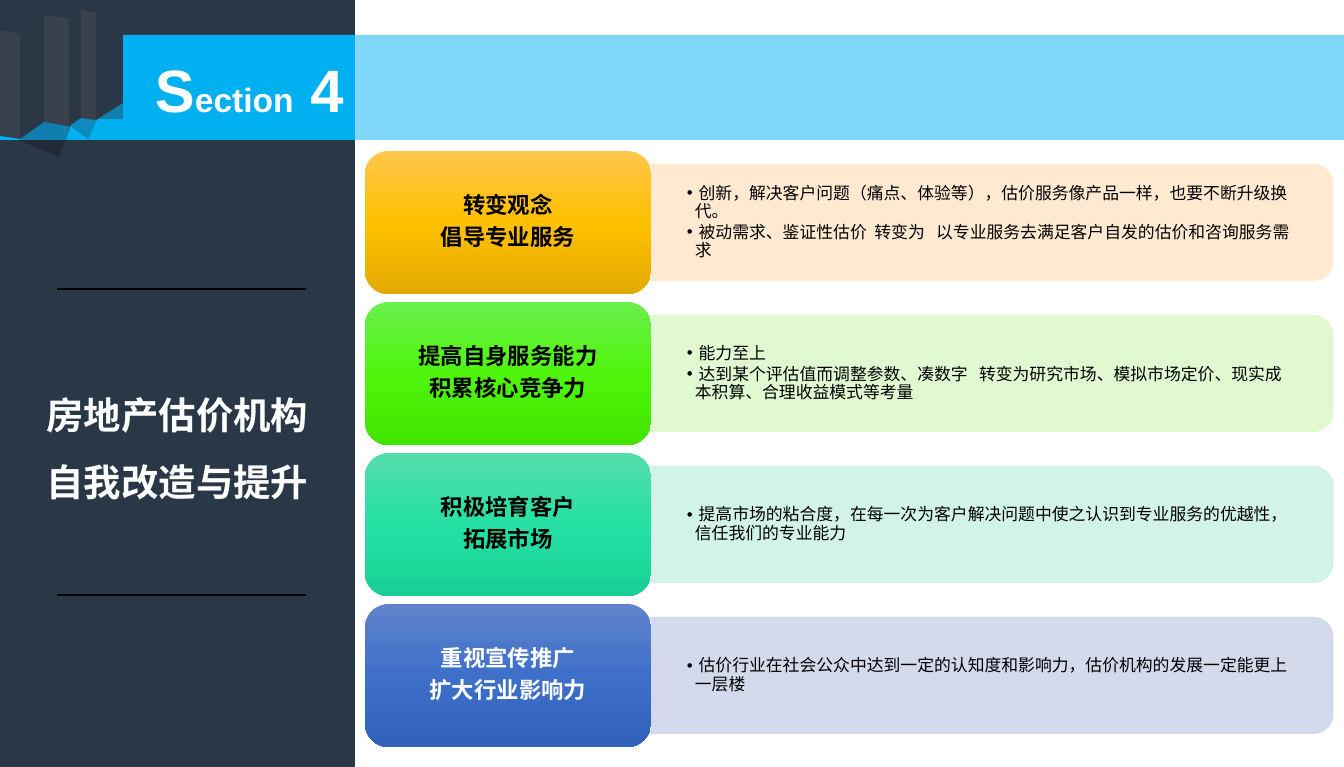
from copy import deepcopy

from lxml.etree import SubElement
from pptx import Presentation
from pptx.dml.color import RGBColor
from pptx.enum.shapes import MSO_CONNECTOR, MSO_SHAPE as SHAPE
from pptx.enum.text import MSO_ANCHOR as ANCHOR, MSO_AUTO_SIZE as FIT, PP_ALIGN as ALIGN
from pptx.oxml.ns import qn
from pptx.util import Pt

PX = 914400 / 134.4
LATIN, CHINESE = "Arial", "Noto Sans CJK SC"
COLORS = {
    "navy": "2A3747", "shade": "212A37", "strip": "38414C", "blue": "01B0F1",
    "white": "FFFFFF", "black": "000000",
}
ROWS = [
    (["转变观念", "倡导专业服务"],
     [" 创新，解决客户问题（痛点、体验等），估价服务像产品一样，也要不断升级换代。",
      " 被动需求、鉴证性估价  转变为   以专业服务去满足客户自发的估价和咨询服务需求"],
     ["FFC64B", "FFC000", "E3AB00"], "FFE8CC", "black"),
    (["提高自身服务能力", "积累核心竞争力"],
     [" 能力至上",
      " 达到某个评估值而调整参数、凑数字   转变为研究市场、模拟市场定价、现实成本积算、合理收益模式等考量"],
     ["6BEF4D", "4FF50D", "41E500"], "DDF9CC", "black"),
    (["积极培育客户", "拓展市场"],
     [" 提高市场的粘合度，在每一次为客户解决问题中使之认识到专业服务的优越性，信任我们的专业能力"],
     ["55DDAB", "25E0A4", "18D095"], "CDF2E7", "black"),
    (["重视宣传推广", "扩大行业影响力"],
     [" 估价行业在社会公众中达到一定的认知度和影响力，估价机构的发展一定能更上一层楼"],
     ["6183CB", "3E70CA", "3062BB"], "CFD6EA", "white"),
]


def px(*values):
    """Turn pixel lengths into a list of EMU."""
    return [round(value * PX) for value in values]


def rgb(color):
    """Return a colour from its name or hex string."""
    return RGBColor.from_string(COLORS.get(color, color))


def paint(shape, color, opacity=100, outline=False):
    """Give a shape a flat fill, an optional matching outline and no shadow."""
    shape.shadow.inherit = False
    shape.fill.solid()
    shape.fill.fore_color.rgb = rgb(color)
    if outline:
        shape.line.color.rgb = rgb(color)
        shape.line.width = Pt(0.5)
    else:
        shape.line.fill.background()
    if opacity < 100:
        for node in shape._element.spPr.xpath(".//a:srgbClr"):
            SubElement(node, qn("a:alpha"), val=str(opacity * 1000))


def paint_gradient(shape, stops):
    """Fill a shape with three colours from top to bottom."""
    shape.shadow.inherit = False
    shape.line.fill.background()
    shape.fill.gradient()
    shape.fill.gradient_angle = 270
    stop_list = shape._element.spPr.xpath(".//a:gsLst")[0]
    stop_list.insert(1, deepcopy(stop_list[0]))
    for stop, color, position in zip(shape.fill.gradient_stops, stops, (0, 0.5, 1)):
        stop.color.rgb = rgb(color)
        stop.position = position


def add_polygon(page, points, color, opacity=100):
    """Draw a filled polygon through the given points."""
    builder = page.shapes.build_freeform(*points[0], scale=PX)
    builder.add_line_segments(points[1:], close=True)
    paint(builder.convert_to_shape(), color, opacity)


def add_line(page, start, end, color, width):
    """Draw a straight line without a shadow."""
    line = page.shapes.add_connector(MSO_CONNECTOR.STRAIGHT, *px(*start, *end))
    line.line.color.rgb = rgb(color)
    line.line.width = Pt(width)
    SubElement(line._element.spPr, qn("a:effectLst"))


def set_frame(frame, anchor, margins=(13, 7)):
    """Set wrapping, anchor and symmetric margins of a text frame."""
    frame.word_wrap = True
    frame.auto_size = FIT.NONE
    frame.vertical_anchor = anchor
    frame.margin_left = frame.margin_right = px(margins[0])[0]
    frame.margin_top = frame.margin_bottom = px(margins[1])[0]


def add_span(para, text, size, color, font=CHINESE, bold=False):
    """Add one formatted run to a paragraph."""
    span = para.add_run()
    span.text = text
    span.font.size = Pt(size)
    span.font.bold = bold
    span.font.name = font
    span.font.color.rgb = rgb(color)
    SubElement(span._r.get_or_add_rPr(), qn("a:ea"), typeface=font)


def write_lines(frame, lines, size, color, spacing, after=0, align=ALIGN.CENTER, bold=True):
    """Write one paragraph for each line and return the paragraphs."""
    for index, text in enumerate(lines):
        para = frame.add_paragraph() if index else frame.paragraphs[0]
        para.alignment = align
        para.line_spacing = spacing
        para.space_before = Pt(0)
        para.space_after = Pt(after)
        add_span(para, text, size, color, bold=bold)
    return frame.paragraphs


def add_folds(page):
    """Draw the folded paper ornament in the top left corner."""
    add_polygon(page, [(97, 13), (123, 13), (123, 119), (97, 119)], "navy", 40)
    add_polygon(page, [(51, 112), (101, 112), (88, 139)], "navy", 30)
    add_polygon(page, [(0, 117), (74, 117), (54, 175)], "navy", 40)
    add_line(page, (70, 126), (44, 121), "navy", 0.5)
    edges = [(0, 30, 136), (20, 34, 139), (44, 15, 122), (69, 19, 126),
             (81, 10, 118), (96, 13, 120), (123, 0, 103)]
    for index, (near, far) in enumerate(zip(edges, edges[1:])):
        (left, top, foot), (right, far_top, far_foot) = near, far
        corners = [(left, top), (right, far_top), (right, far_foot), (left, foot)]
        add_polygon(page, corners, "navy" if index % 2 else "strip")
    add_polygon(page, [(19, 140), (65, 140), (59, 157)], "shade")


def add_sidebar(page, left, top, width, height):
    """Draw the dark sidebar with its banner, rules and title."""
    for box, color, opacity in [
        ((left, top, width, height), "navy", 100),
        ((left, top + 35, width, 105), "blue", 100),
        ((left + width, top + 35, 1344 - width, 105), "blue", 50),
    ]:
        paint(page.shapes.add_shape(SHAPE.RECTANGLE, *px(*box)), color, opacity)
    add_folds(page)
    for rule in (289, 595):
        add_line(page, (left + 57, top + rule), (left + 306, top + rule), "black", 0.75)
    title = page.shapes.title
    title.left, title.top, title.width, title.height = px(left, top + 363, width, 141)
    set_frame(title.text_frame, ANCHOR.TOP)
    write_lines(title.text_frame, ["房地产估价机构", "自我改造与提升"], 20, "white", 1.5)
    title._element.getparent().append(title._element)


def add_section_label(page, left, top, width, height):
    """Write the section number on the banner."""
    frame = page.shapes.add_textbox(*px(left, top, width, height)).text_frame
    set_frame(frame, ANCHOR.TOP)
    for text, size in [("S", 32), ("ection", 18), (" 4", 32)]:
        add_span(frame.paragraphs[0], text, size, "white", LATIN, True)


def add_row(page, left, top, width, height, row):
    """Draw one heading block and its panel of bullets."""
    heading, points, stops, tint, ink = row
    block_width, panel_height = 286, 116
    panel_left, panel_width = left + block_width, width - block_width
    middle, center = top + height / 2, panel_left + panel_width / 2
    panel = page.shapes.add_shape(SHAPE.ROUND_2_SAME_RECTANGLE, *px(
        center - panel_height / 2, middle - panel_width / 2, panel_height, panel_width))
    panel.rotation = 90
    paint(panel, tint, 90, outline=True)

    notes = page.shapes.add_textbox(*px(panel_left, middle - 52, panel_width - 6, 104))
    set_frame(notes.text_frame, ANCHOR.MIDDLE, (36, 19))
    for para in write_lines(notes.text_frame, points, 9, "black", 0.9, 1.35, ALIGN.LEFT, False):
        props = para._p.get_or_add_pPr()
        indent = px(8)[0]
        props.set("marL", str(indent))
        props.set("indent", str(-indent))
        SubElement(props, qn("a:buFont"), typeface=LATIN)
        SubElement(props, qn("a:buChar"), char="•")

    block = page.shapes.add_shape(
        SHAPE.ROUNDED_RECTANGLE, *px(left, top, block_width, height))
    paint_gradient(block, stops)
    set_frame(block.text_frame, ANCHOR.MIDDLE, (7, 4))
    write_lines(block.text_frame, heading, 12, ink, 0.9, 4.2)


def main():
    """Build the slide and save it."""
    deck = Presentation()
    deck.slide_width, deck.slide_height = px(1344, 767)
    page = deck.slides.add_slide(deck.slide_layouts[5])
    add_sidebar(page, 0, 0, 355, 767)
    add_section_label(page, 142, 46, 349, 86)
    for index, row in enumerate(ROWS):
        add_row(page, 365, 151 + 151 * index, 968, 143, row)
    deck.save("out.pptx")


if __name__ == "__main__":
    main()
